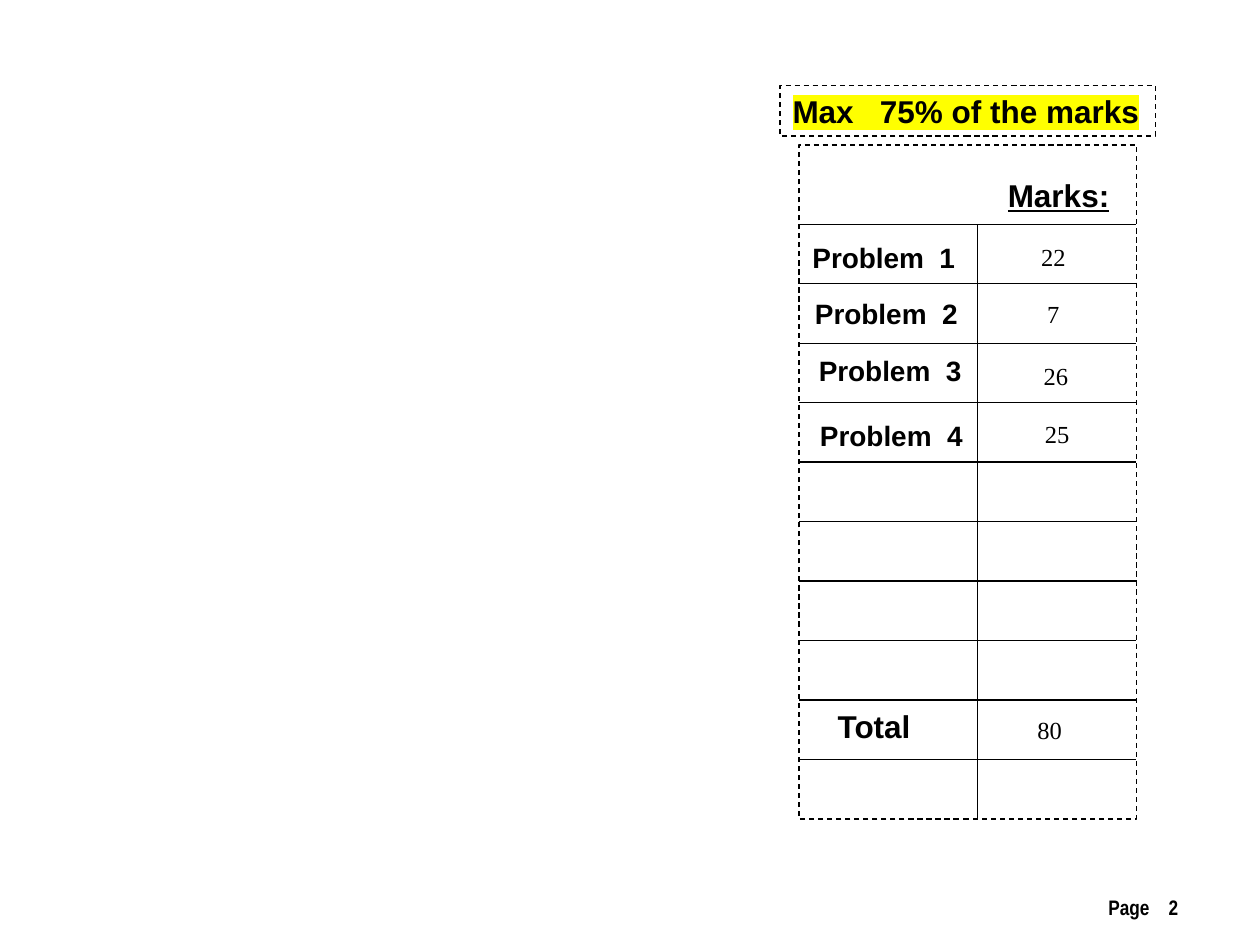
from lxml import etree
from pptx import Presentation, util as u
from pptx.dml.color import RGBColor
from pptx.enum import dml, shapes, text
from pptx.oxml.ns import qn

BLACK = RGBColor(0, 0, 0)
WHITE = RGBColor(255, 255, 255)
YELLOW = RGBColor(255, 255, 0)

LEFT, DIVIDER, RIGHT = 6.34, 7.76, 9.02
TOP, FIRST_RULE, BOTTOM = 1.15, 1.78, 6.5
ROWS = 10
ROW_HEIGHT = (BOTTOM - FIRST_RULE) / ROWS

# Row, label, label offset (x, y), label size, marks, marks offset (x, y);
# offsets run from the top left corner of the cell
MARKS = [
    (0, "Problem  1", (0.01, 0.08), 16, "22", (0.08, 0.09)),
    (1, "Problem  2", (0.03, 0.05), 16, "7", (0.08, 0.07)),
    (2, "Problem  3", (0.06, 0.03), 16, "26", (0.10, 0.09)),
    (3, "Problem  4", (0.07, 0.08), 16, "25", (0.11, 0.08)),
    (8, "Total", (0.21, 0.01), 18, "80", (0.05, 0.07)),
]


def row_top(row):
    return FIRST_RULE + row * ROW_HEIGHT


def place(shape, left, top, width, height):
    shape.left, shape.top = u.Inches(left), u.Inches(top)
    shape.width, shape.height = u.Inches(width), u.Inches(height)


def write(box, words, size=18, font="Arial", bold=True, underline=False,
          align=text.PP_ALIGN.LEFT, anchor=text.MSO_ANCHOR.TOP, wrap=True,
          highlight=None):
    frame = box.text_frame
    frame.word_wrap = wrap
    frame.auto_size = text.MSO_AUTO_SIZE.NONE
    frame.vertical_anchor = anchor
    para = frame.paragraphs[0]
    para.alignment = align
    span = para.add_run()
    span.text = words
    span.font.size = u.Pt(size)
    span.font.bold = bold
    span.font.underline = underline
    span.font.color.rgb = BLACK
    if highlight is not None:
        mark = etree.SubElement(span.font._element, qn("a:highlight"))
        etree.SubElement(mark, qn("a:srgbClr"), val=str(highlight))
    span.font.name = font


def add_text(page, words, left, top, width, height, **look):
    box = page.shapes.add_textbox(0, 0, 0, 0)
    place(box, left, top, width, height)
    write(box, words, **look)


def dash_outline(shape):
    shape.line.color.rgb = BLACK
    shape.line.width = u.Pt(0.75)
    shape.line.dash_style = dml.MSO_LINE.DASH


def add_rule(page, x1, y1, x2, y2):
    rule = page.shapes.add_connector(
        shapes.MSO_CONNECTOR.STRAIGHT, *map(u.Inches, (x1, y1, x2, y2)))
    rule.line.color.rgb = BLACK
    rule.line.width = u.Pt(0.75)
    etree.SubElement(rule._element.spPr, qn("a:effectLst"))


def add_grid(page):
    frame = page.shapes.add_shape(shapes.MSO_SHAPE.RECTANGLE, 0, 0, 0, 0)
    place(frame, LEFT, TOP, RIGHT - LEFT, BOTTOM - TOP)
    frame.shadow.inherit = False
    frame.fill.solid()
    frame.fill.fore_color.rgb = WHITE
    dash_outline(frame)
    for row in range(ROWS):
        add_rule(page, LEFT, row_top(row), RIGHT, row_top(row))
    add_rule(page, DIVIDER, FIRST_RULE, DIVIDER, BOTTOM)


def add_marks(page):
    add_text(page, "Marks:", 7.9, 1.35, 1.02, 0.4, underline=True, wrap=False)
    for row, label, (dx, dy), size, marks, (mx, my) in MARKS:
        width, height = (1.34, 0.37) if size == 16 else (0.8, 0.4)
        add_text(page, label, LEFT + dx, row_top(row) + dy, width, height,
                 size=size, wrap=False)
        add_text(page, marks, DIVIDER + mx, row_top(row) + my, 1.04, 0.34,
                 size=14, font="Times New Roman", bold=False,
                 align=text.PP_ALIGN.CENTER)


def add_heading(page):
    title = page.shapes.title
    place(title, 6.19, 0.68, 2.98, 0.4)
    dash_outline(title)
    write(title, "Max   75% of the marks", wrap=False, highlight=YELLOW)


def main():
    deck = Presentation()
    deck.slide_width, deck.slide_height = u.Inches(10), u.Inches(7.5)
    page = deck.slides.add_slide(deck.slide_layouts.get_by_name("Title Only"))
    add_heading(page)
    add_grid(page)
    add_marks(page)
    add_text(page, "Page    2", 6.87, 7.05, 2.58, 0.3, size=12,
             font="Arial Narrow", align=text.PP_ALIGN.RIGHT,
             anchor=text.MSO_ANCHOR.MIDDLE)
    deck.save("out.pptx")


if __name__ == "__main__":
    main()
